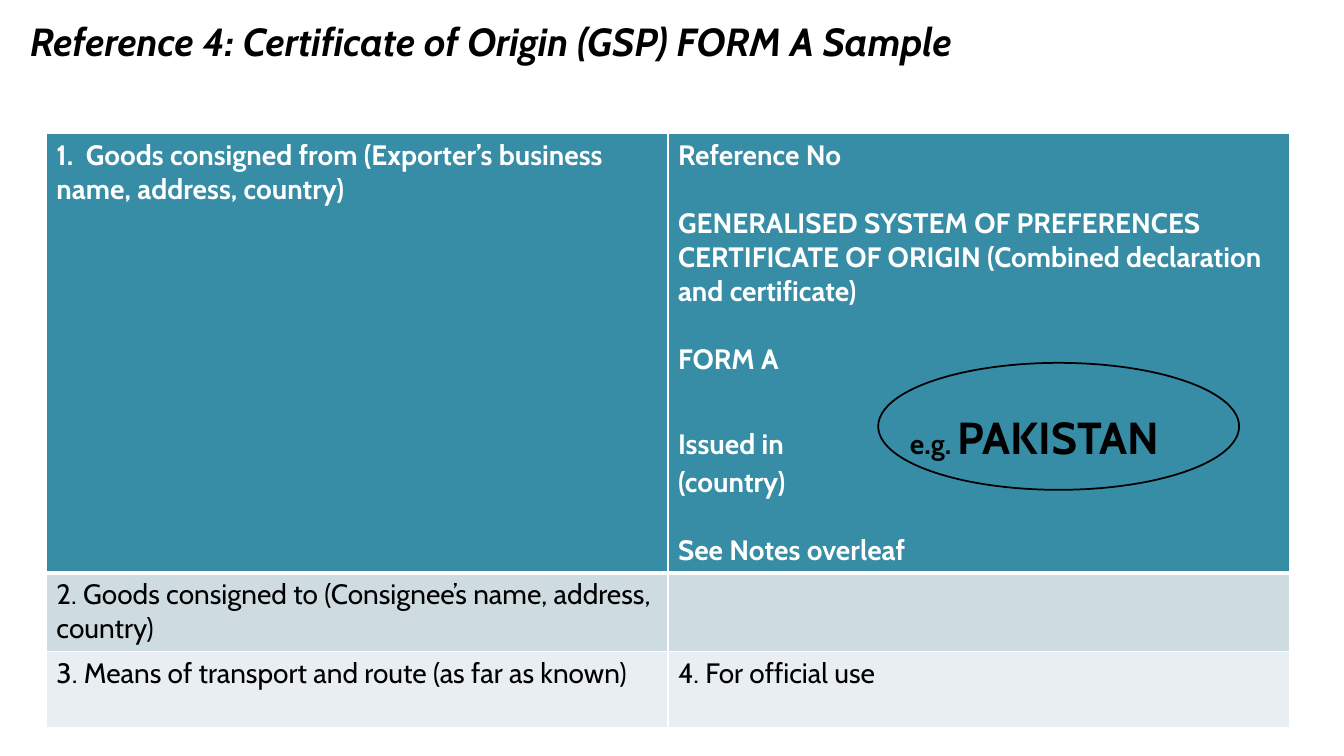
from lxml import etree
from pptx import Presentation
from pptx.dml.color import RGBColor
from pptx.enum.shapes import MSO_SHAPE
from pptx.oxml.ns import qn
from pptx.util import Inches, Pt

ELLIPSE = MSO_SHAPE.OVAL
FONT = "Cabin"
BLACK, WHITE = "000000", "FFFFFF"
ROW_FILLS = ["378DA6", "CEDBE1", "E8EEF1"]
ROW_HEIGHTS = [4.36, 0.78, 0.76]
COUNTRY_TAB = 2.3
SECTION_GAP = 24.3

# Each entry: its runs, and whether a gap stands above it
REFERENCE_ENTRIES = [
    (["Reference No"], False),
    (["GENERALISED SYSTEM OF PREFERENCES CERTIFICATE OF ORIGIN "
      "(Combined declaration and certificate)"], True),
    (["FORM A"], True),
    (["Issued in\t", "e.g. ", "PAKISTAN"], True),
    (["(country)"], False),
    (["See Notes overleaf"], True),
]
CERTIFICATE = [
    [[(["1.  Goods consigned from (Exporter’s business name, address, country)"], False)],
     REFERENCE_ENTRIES],
    [[(["2. Goods consigned to (Consignee’s name, address, country)"], False)], []],
    [[(["3. Means of transport and route (as far as known)"], False)],
     [(["4. For official use"], False)]],
]


def color(value):
    return RGBColor.from_string(value)


def style(font, size, ink, bold=False, italic=False):
    font.name, font.size = FONT, Pt(size)
    font.bold, font.italic = bold, italic
    font.color.rgb = color(ink)


def add_tab_stop(paragraph, position):
    tabs = etree.SubElement(paragraph._p.get_or_add_pPr(), qn("a:tabLst"))
    etree.SubElement(tabs, qn("a:tab"), pos=str(Inches(position)), algn="l")


def set_borders(cell, top, bottom):
    properties = cell._tc.get_or_add_tcPr()
    for side, width in (("L", 1), ("R", 1), ("T", top), ("B", bottom)):
        line = etree.SubElement(properties, qn(f"a:ln{side}"), w=str(Pt(width)))
        fill = etree.SubElement(line, qn("a:solidFill"))
        etree.SubElement(fill, qn("a:srgbClr"), val=WHITE)


def fill_cell(cell, entries, header):
    frame = cell.text_frame
    for index, (texts, gap_above) in enumerate(entries):
        paragraph = frame.add_paragraph() if index else frame.paragraphs[0]
        if gap_above:
            paragraph.space_before = Pt(SECTION_GAP)
        if len(texts) > 1:
            add_tab_stop(paragraph, COUNTRY_TAB)
        for position, text in enumerate(texts):
            run = paragraph.add_run()
            run.text = text
            ink = WHITE if header and position == 0 else BLACK
            style(run.font, 32 if position == 2 else 20, ink, bold=header)
    if not entries:
        style(frame.paragraphs[0].font, 20, BLACK)


def add_title(slide, left, top, width, height):
    frame = slide.shapes.add_textbox(
        Inches(left), Inches(top), Inches(width), Inches(height)).text_frame
    frame.word_wrap = True
    frame.text = "Reference 4: Certificate of Origin (GSP) FORM A Sample"
    style(frame.paragraphs[0].runs[0].font, 28, BLACK, bold=True, italic=True)


def add_certificate(slide, left, top, width):
    form = slide.shapes.add_table(
        len(CERTIFICATE), 2, Inches(left), Inches(top),
        Inches(width), Inches(sum(ROW_HEIGHTS))).table
    for r, (row, height, shade) in enumerate(zip(CERTIFICATE, ROW_HEIGHTS, ROW_FILLS)):
        form.rows[r].height = Inches(height)
        for c, entries in enumerate(row):
            cell = form.cell(r, c)
            set_borders(cell, top=3 if r == 1 else 1, bottom=3 if r == 0 else 1)
            cell.fill.solid()
            cell.fill.fore_color.rgb = color(shade)
            fill_cell(cell, entries, header=r == 0)


def add_country_ring(slide, left, top, width, height):
    ring = slide.shapes.add_shape(
        ELLIPSE, Inches(left), Inches(top), Inches(width), Inches(height))
    ring.shadow.inherit = False
    ring.fill.background()
    ring.line.color.rgb = color(BLACK)
    ring.line.width = Pt(1.25)


def main():
    deck = Presentation()
    deck.slide_width, deck.slide_height = Inches(13.33), Inches(7.5)
    slide = deck.slides.add_slide(deck.slide_layouts[6])
    add_certificate(slide, 0.46, 1.32, 12.33)
    add_title(slide, 0.2, 0.12, 10.76, 0.57)
    add_country_ring(slide, 8.71, 3.6, 3.58, 1.26)
    deck.save("out.pptx")


if __name__ == "__main__":
    main()
